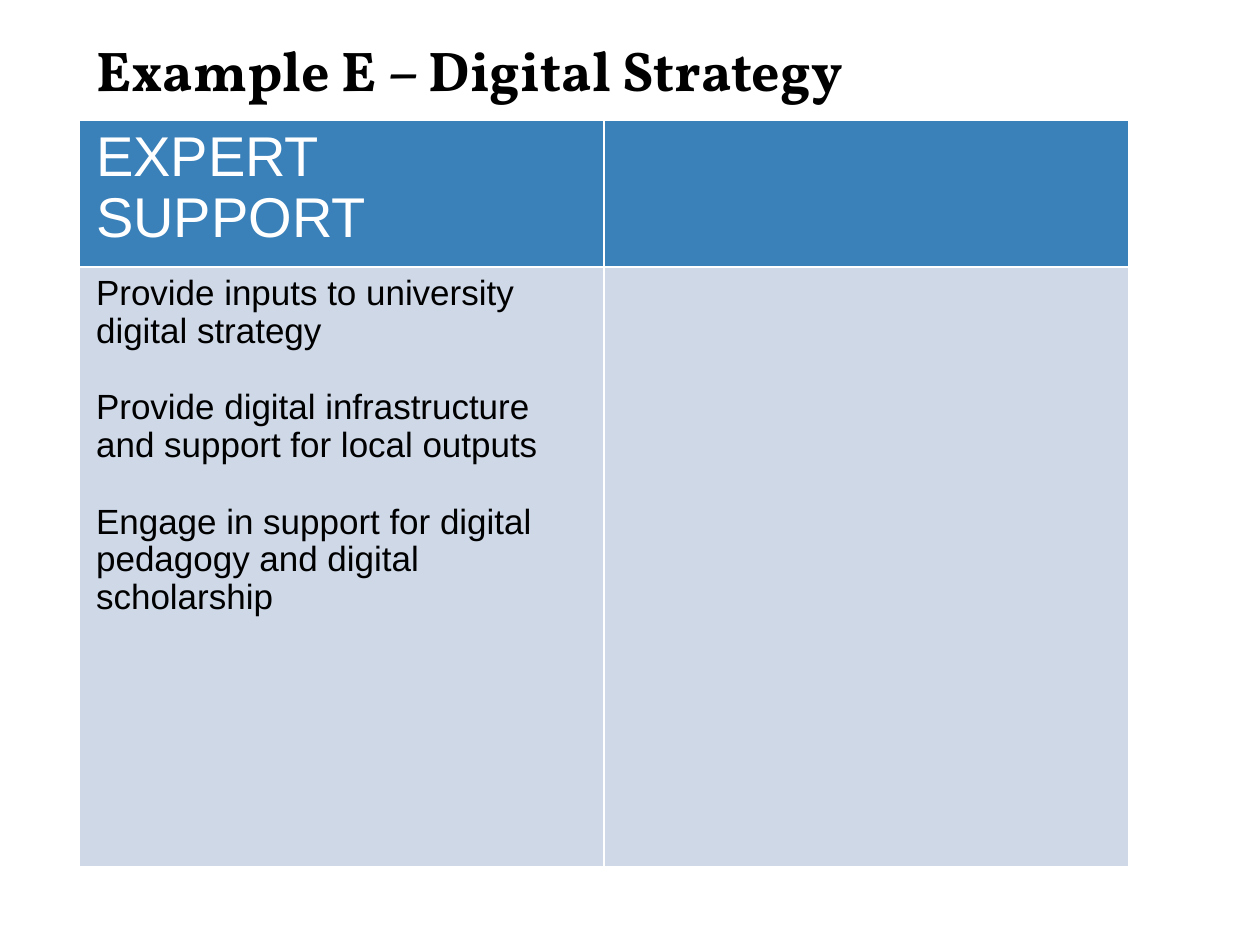
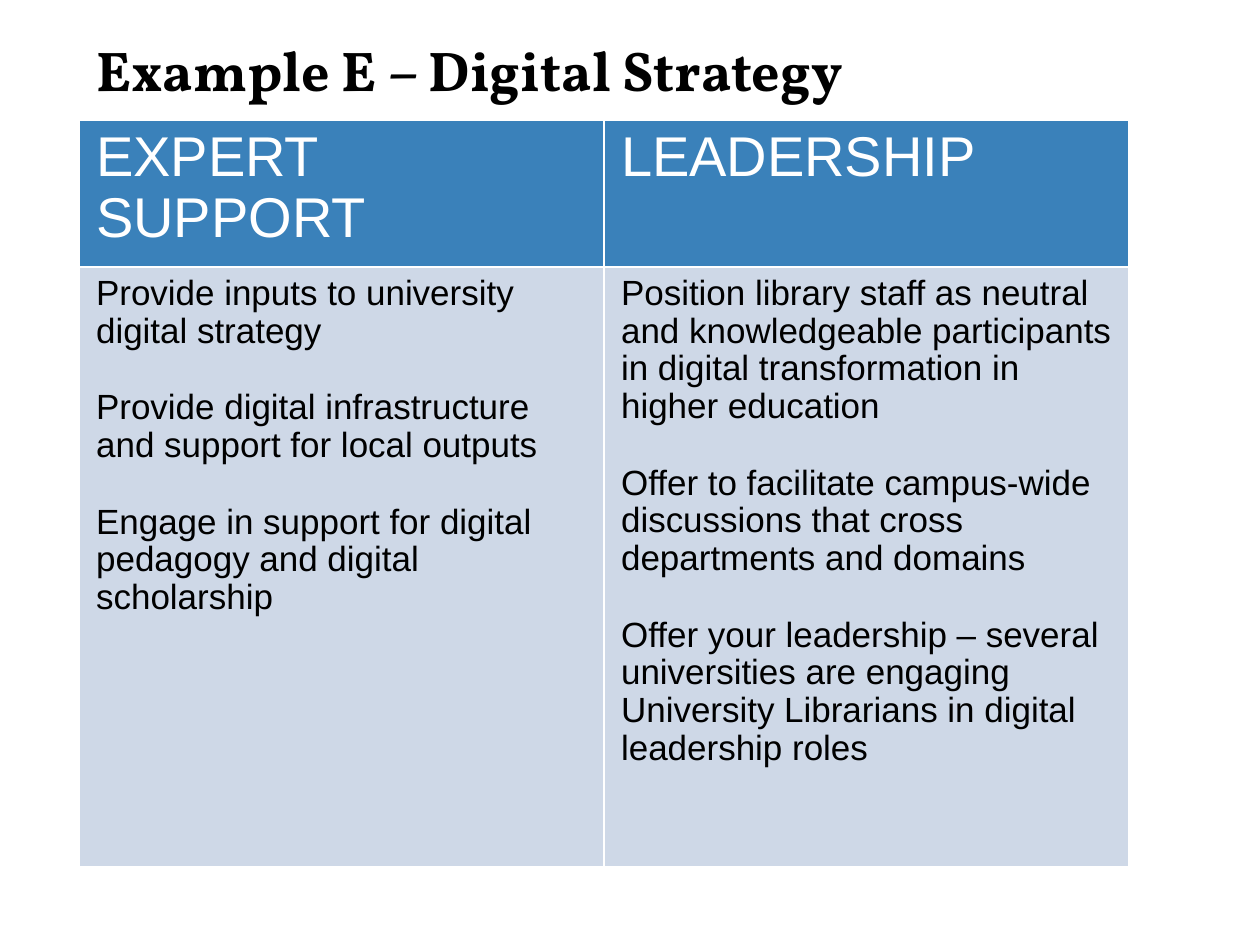
from lxml.etree import SubElement
from pptx import Presentation
from pptx.dml.color import RGBColor
from pptx.enum.text import MSO_ANCHOR, PP_ALIGN
from pptx.oxml.ns import qn
from pptx.util import Pt

COLORS = {"header": "3A81BA", "body": "CED8E7", "white": "FFFFFF", "black": "000000"}
LEFT, TABLE_TOP, COL_WIDTH = 34, 51.4, 225
ROW_HEIGHTS = [63, 257]
TITLE = "Example E – Digital Strategy"

SUPPORT = ("EXPERT SUPPORT", [
    "Provide inputs to university digital strategy",
    "Provide digital infrastructure and support for local outputs",
    "Engage in support for digital pedagogy and digital scholarship",
])
LEADERSHIP = ("LEADERSHIP", [
    "Position library staff as neutral and knowledgeable participants "
    "in digital transformation in higher education",
    "Offer to facilitate campus-wide discussions that cross departments and domains",
    "Offer your leadership – several universities are engaging "
    "University Librarians in digital leadership roles",
])
EMPTY = ("", [])
SLIDES = [[SUPPORT, EMPTY], [SUPPORT, LEADERSHIP]]


def add_run(p, text, font, size, color, bold=False):
    r = p.add_run()
    r.text = text
    r.font.name = font
    r.font.size = Pt(size)
    r.font.bold = bold
    r.font.color.rgb = RGBColor.from_string(COLORS[color])


def fill_cell(cell, fill, texts, size, color):
    """Give a cell white borders, a fill and one paragraph per text."""
    tcPr = cell._tc.get_or_add_tcPr()
    for side in ("lnL", "lnR", "lnT", "lnB"):
        ln = SubElement(tcPr, qn(f"a:{side}"), w=str(Pt(1)))
        line_fill = SubElement(ln, qn("a:solidFill"))
        SubElement(line_fill, qn("a:srgbClr"), val=COLORS["white"])
    cell.fill.solid()
    cell.fill.fore_color.rgb = RGBColor.from_string(COLORS[fill])
    tf = cell.text_frame
    for i, text in enumerate(texts):
        p = tf.add_paragraph() if i else tf.paragraphs[0]
        p.line_spacing = 0.97
        if i:
            p.space_before = Pt(16.7)
        add_run(p, text, "Arial", size, color)


prs = Presentation()
prs.slide_width, prs.slide_height = Pt(540), Pt(405)

for columns in SLIDES:
    s = prs.slides.add_slide(prs.slide_layouts[5])

    title = s.shapes.title
    title.left, title.top = Pt(LEFT), Pt(8)
    title.width, title.height = Pt(2 * COL_WIDTH), Pt(43)
    tf = title.text_frame
    tf.margin_left = tf.margin_right = tf.margin_top = tf.margin_bottom = Pt(7.2)
    tf.vertical_anchor = MSO_ANCHOR.MIDDLE
    p = tf.paragraphs[0]
    p.alignment = PP_ALIGN.LEFT
    add_run(p, TITLE, "Vollkorn", 24, "black", bold=True)

    table = s.shapes.add_table(2, 2, Pt(LEFT), Pt(TABLE_TOP),
                               Pt(2 * COL_WIDTH), Pt(sum(ROW_HEIGHTS))).table
    for row, height in zip(table.rows, ROW_HEIGHTS):
        row.height = Pt(height)
    for c, (heading, points) in enumerate(columns):
        table.columns[c].width = Pt(COL_WIDTH)
        fill_cell(table.cell(0, c), "header", [heading] if heading else [], 24, "white")
        fill_cell(table.cell(1, c), "body", points, 15, "black")

prs.save("out.pptx")
